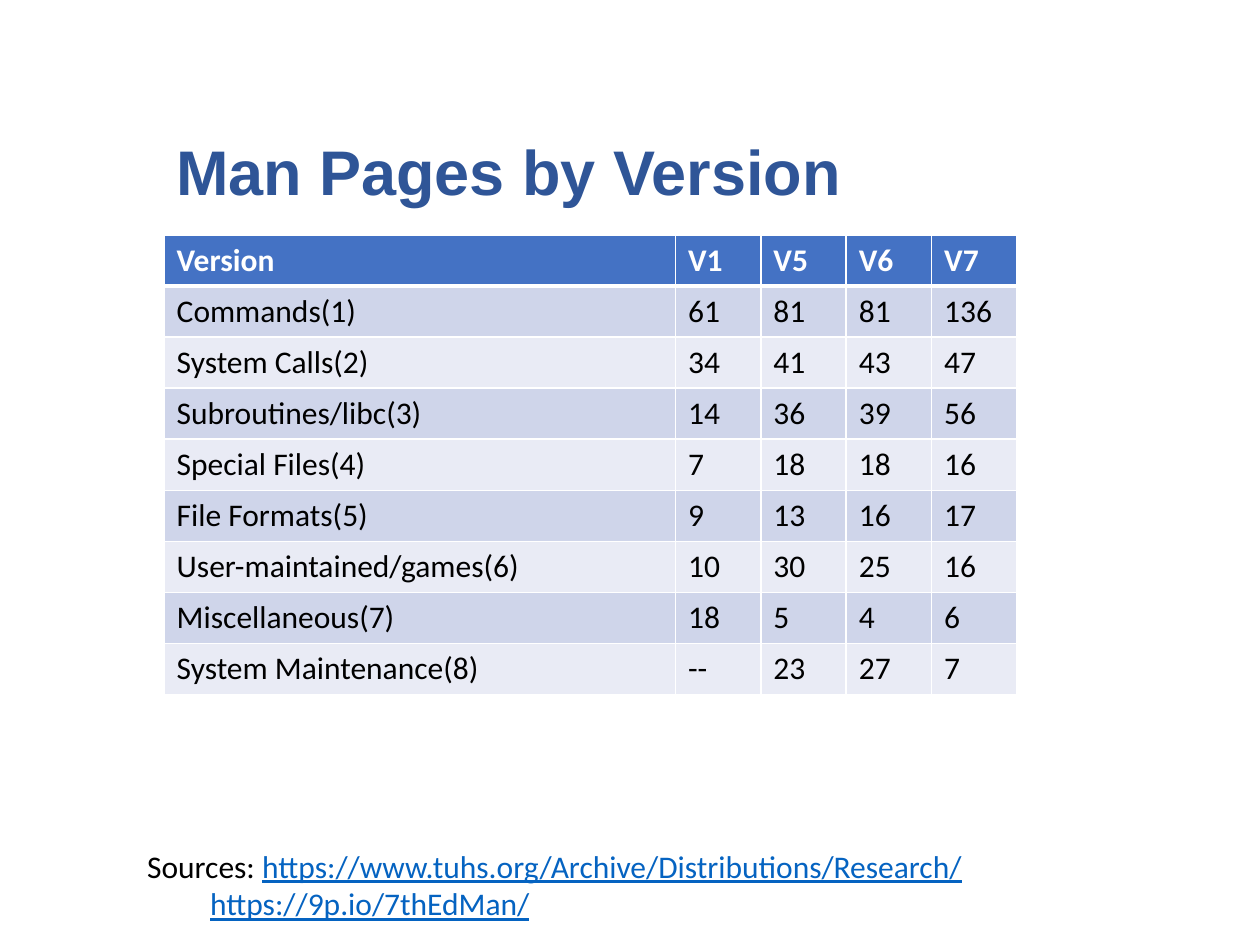
import pptx
import pptx.dml.color
import pptx.enum.text
import pptx.oxml
import pptx.oxml.ns
import pptx.util

Pt = pptx.util.Pt
COLORS = {
    "title": "2F5597", "header": "4472C4", "odd": "CFD5EA", "even": "E9EBF5",
    "white": "FFFFFF", "text": "000000", "link": "0563C1",
}
ROWS = [
    ("Version", "V1", "V5", "V6", "V7"),
    ("Commands(1)", "61", "81", "81", "136"),
    ("System Calls(2)", "34", "41", "43", "47"),
    ("Subroutines/libc(3)", "14", "36", "39", "56"),
    ("Special Files(4)", "7", "18", "18", "16"),
    ("File Formats(5)", "9", "13", "16", "17"),
    ("User-maintained/games(6)", "10", "30", "25", "16"),
    ("Miscellaneous(7)", "18", "5", "4", "6"),
    ("System Maintenance(8)", "--", "23", "27", "7"),
]


def rgb(name):
    return pptx.dml.color.RGBColor.from_string(COLORS[name])


def style(span, size, color, name="Calibri", bold=False, underline=False):
    font = span.font
    font.size, font.name, font.bold, font.underline = Pt(size), name, bold, underline
    font.color.rgb = rgb(color)


def add_title(page, left, top, width, height):
    box = page.shapes.add_textbox(Pt(left), Pt(top), Pt(width), Pt(height))
    frame = box.text_frame
    frame.word_wrap = True
    frame.margin_top = Pt(2.5)
    frame.text = "Man Pages by Version"
    style(frame.paragraphs[0].runs[0], 36, "title", "Arial", bold=True)


def set_borders(cell, bottom, top):
    properties = cell._tc.get_or_add_tcPr()
    for side, width in (("L", 1), ("R", 1), ("T", top), ("B", bottom)):
        properties.append(pptx.oxml.parse_xml(
            f'<a:ln{side} {pptx.oxml.ns.nsdecls("a")} w="{Pt(width)}"><a:solidFill>'
            f'<a:srgbClr val="{COLORS["white"]}"/></a:solidFill></a:ln{side}>'))


def add_version_table(page, left, top, width, height, number_width=48.8):
    table = page.shapes.add_table(
        len(ROWS), len(ROWS[0]), Pt(left), Pt(top), Pt(width), Pt(height)).table
    numbers = len(ROWS[0]) - 1
    for index, column in enumerate(table.columns):
        column.width = Pt(number_width if index else width - numbers * number_width)
    for index, values in enumerate(ROWS):
        table.rows[index].height = Pt(height / len(ROWS))
        header = index == 0
        fill = "header" if header else "odd" if index % 2 else "even"
        for cell, value in zip(table.rows[index].cells, values):
            cell.text = value
            style(cell.text_frame.paragraphs[0].runs[0], 18,
                  "white" if header else "text", bold=header)
            # The rule under the header is thicker than the rest
            set_borders(cell, bottom=3 if header else 1, top=3 if index == 1 else 1)
            cell.fill.solid()
            cell.fill.fore_color.rgb = rgb(fill)


def add_sources(page, left, top, width, height):
    box = page.shapes.add_textbox(Pt(left), Pt(top), Pt(width), Pt(height))
    frame = box.text_frame
    frame.word_wrap = False
    frame.auto_size = pptx.enum.text.MSO_AUTO_SIZE.SHAPE_TO_FIT_TEXT
    para = frame.paragraphs[0]
    # The tab stop indents the second address
    para._p.get_or_add_pPr().append(pptx.oxml.parse_xml(
        f'<a:tabLst {pptx.oxml.ns.nsdecls("a")}><a:tab pos="{Pt(36)}" algn="l"/></a:tabLst>'))
    para.text = "Sources: "
    para.add_run().text = "https://www.tuhs.org/Archive/Distributions/Research/"
    para.add_line_break()
    para.add_run().text = "\t"
    para.add_run().text = "https://9p.io/7thEdMan/"
    for span in para.runs:
        link = span.text.startswith("https")
        style(span, 18, "link" if link else "text", underline=link)
    para.font.size = Pt(18)


def main():
    deck = pptx.Presentation()
    deck.slide_width, deck.slide_height = Pt(720), Pt(540)
    page = deck.slides.add_slide(deck.slide_layouts[6])
    add_title(page, 93.6, 73.4, 576.7, 38.2)
    add_version_table(page, 93.8, 134.2, 487.4, 262.8)
    add_sources(page, 77, 480.2, 486, 51)
    deck.save("out.pptx")


if __name__ == "__main__":
    main()
